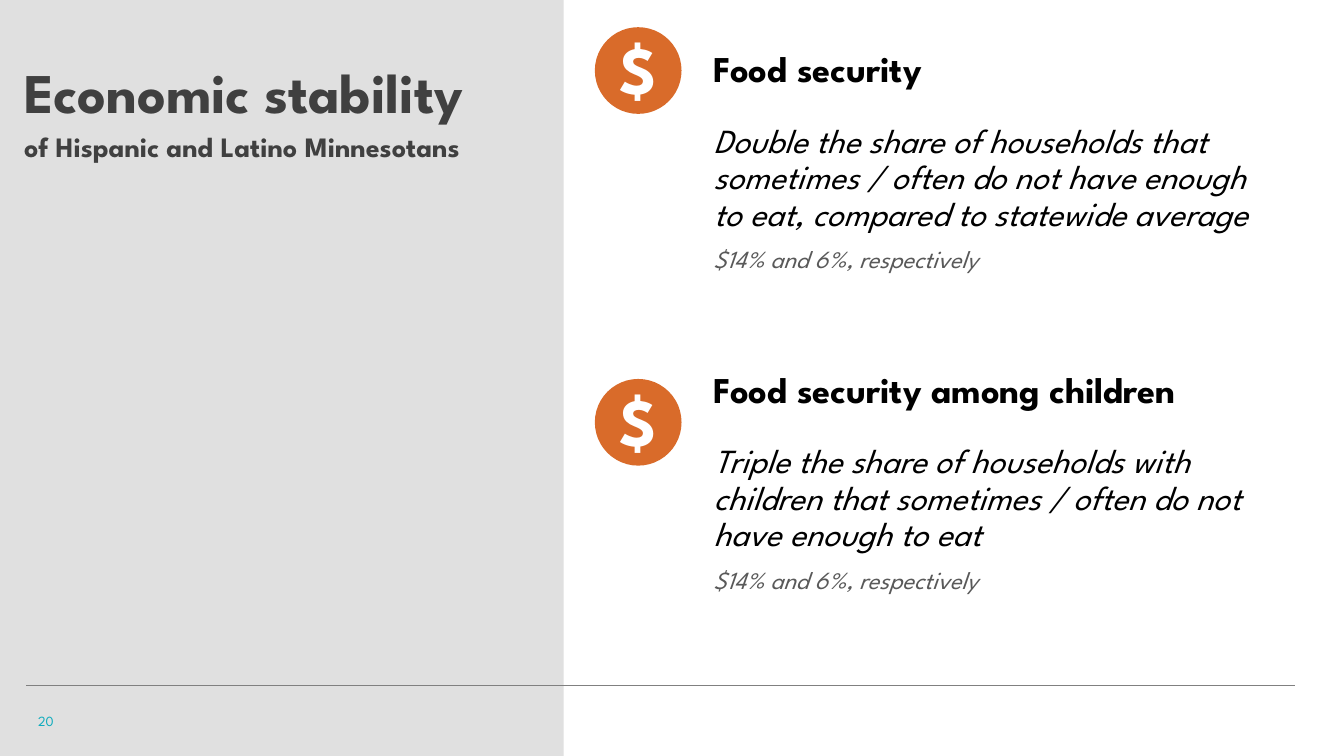
"""Builds the slide on the economic stability of Hispanic and Latino Minnesotans."""
from lxml.etree import SubElement
from pptx import Presentation
from pptx.dml.color import RGBColor
from pptx.enum.shapes import MSO_CONNECTOR, MSO_SHAPE
from pptx.enum.text import MSO_ANCHOR, PP_ALIGN
from pptx.oxml.ns import qn
from pptx.util import Inches, Pt

COLORS = {
    "panel": "E0E0E0",
    "rule": "808080",
    "title": "404040",
    "text": "000000",
    "detail": "595959",
    "number": "0FACBD",
    "icon": "D96B2A",
    "symbol": "FFFFFF",
}

FINDINGS = [
    ("Food security",
     "Double the share of households that sometimes / often do not have enough "
     "to eat, compared to statewide average",
     "$14% and 6%, respectively"),
    ("Food security among children",
     "Triple the share of households with children that sometimes / often do not "
     "have enough to eat",
     "$14% and 6%, respectively"),
]


class SlideBuilder:
    """Holds the style and the current slide."""

    font_name = "League Spartan"

    def __init__(self, slide):
        self.slide = slide

    def color(self, name):
        return RGBColor.from_string(COLORS[name])

    def style(self, run, size, color, bold=False, italic=False):
        run.font.name = self.font_name
        run.font.size = Pt(size)
        run.font.bold = bold
        run.font.italic = italic
        run.font.color.rgb = self.color(color)

    def shape(self, shapes, kind, left, top, width, height, fill):
        shape = shapes.add_shape(
            kind, Inches(left), Inches(top), Inches(width), Inches(height))
        shape.shadow.inherit = False
        shape.fill.solid()
        shape.fill.fore_color.rgb = self.color(fill)
        shape.line.fill.background()

    def text_frame(self, shapes, left, top, width, height, anchor=MSO_ANCHOR.TOP):
        text_box = shapes.add_textbox(
            Inches(left), Inches(top), Inches(width), Inches(height))
        text_frame = text_box.text_frame
        text_frame.word_wrap = True
        text_frame.vertical_anchor = anchor
        return text_frame

    def rule(self, left, right, top):
        connector = self.slide.shapes.add_connector(
            MSO_CONNECTOR.STRAIGHT,
            Inches(left), Inches(top), Inches(right), Inches(top))
        connector.line.color.rgb = self.color("rule")
        connector.line.width = Pt(0.5)
        SubElement(connector._element.spPr, qn("a:effectLst"))

    def title(self, heading, subheading):
        text_frame = self.text_frame(
            self.slide.shapes, 0.14, 0.32, 5.24, 1.35, MSO_ANCHOR.BOTTOM)
        paragraph = text_frame.paragraphs[0]
        paragraph.text = f"{heading}\v{subheading}"
        paragraph.line_spacing = 1.14
        for run, size in zip(paragraph.runs, (40, 20)):
            self.style(run, size, "title", bold=True)

    def findings(self, findings):
        text_frame = self.text_frame(self.slide.shapes, 6.98, 0.46, 5.52, 6.29)
        text_frame.text = "\n".join(line for finding in findings for line in finding)
        styles = [
            (70, 25.9, "text", True, False),
            (24, 24.1, "text", False, True),
            (10, 17.6, "detail", False, True),
        ]
        for index, paragraph in enumerate(text_frame.paragraphs):
            space_before, *run_style = styles[index % len(styles)]
            paragraph.space_before = Pt(space_before if index else 0)
            paragraph.line_spacing = 0.9
            self.style(paragraph.runs[0], *run_style)

    def dollar_icon(self, top):
        shapes = self.slide.shapes.add_group_shape().shapes
        self.shape(shapes, MSO_SHAPE.OVAL, 5.9, top, 0.86, 0.86, "icon")
        text_frame = self.text_frame(shapes, 5.98, top - 0.05, 0.71, 0.91)
        text_frame.text = "$"
        paragraph = text_frame.paragraphs[0]
        paragraph.alignment = PP_ALIGN.CENTER
        self.style(paragraph.runs[0], 48, "symbol", bold=True)

    def slide_number(self, number):
        text_frame = self.text_frame(
            self.slide.shapes, 0.28, 6.95, 3, 0.4, MSO_ANCHOR.MIDDLE)
        text_frame.text = number
        self.style(text_frame.paragraphs[0].runs[0], 10, "number")


def main():
    presentation = Presentation()
    presentation.slide_width = Inches(13.33)
    presentation.slide_height = Inches(7.5)
    slide = presentation.slides.add_slide(presentation.slide_layouts[6])
    builder = SlideBuilder(slide)
    builder.shape(slide.shapes, MSO_SHAPE.RECTANGLE, 0, 0, 5.59, 7.5, "panel")
    builder.rule(0.26, 12.84, 6.8)
    builder.title("Economic stability", "of Hispanic and Latino Minnesotans")
    builder.findings(FINDINGS)
    builder.slide_number("20")
    for top in (0.27, 3.76):
        builder.dollar_icon(top)
    presentation.save("out.pptx")


if __name__ == "__main__":
    main()
